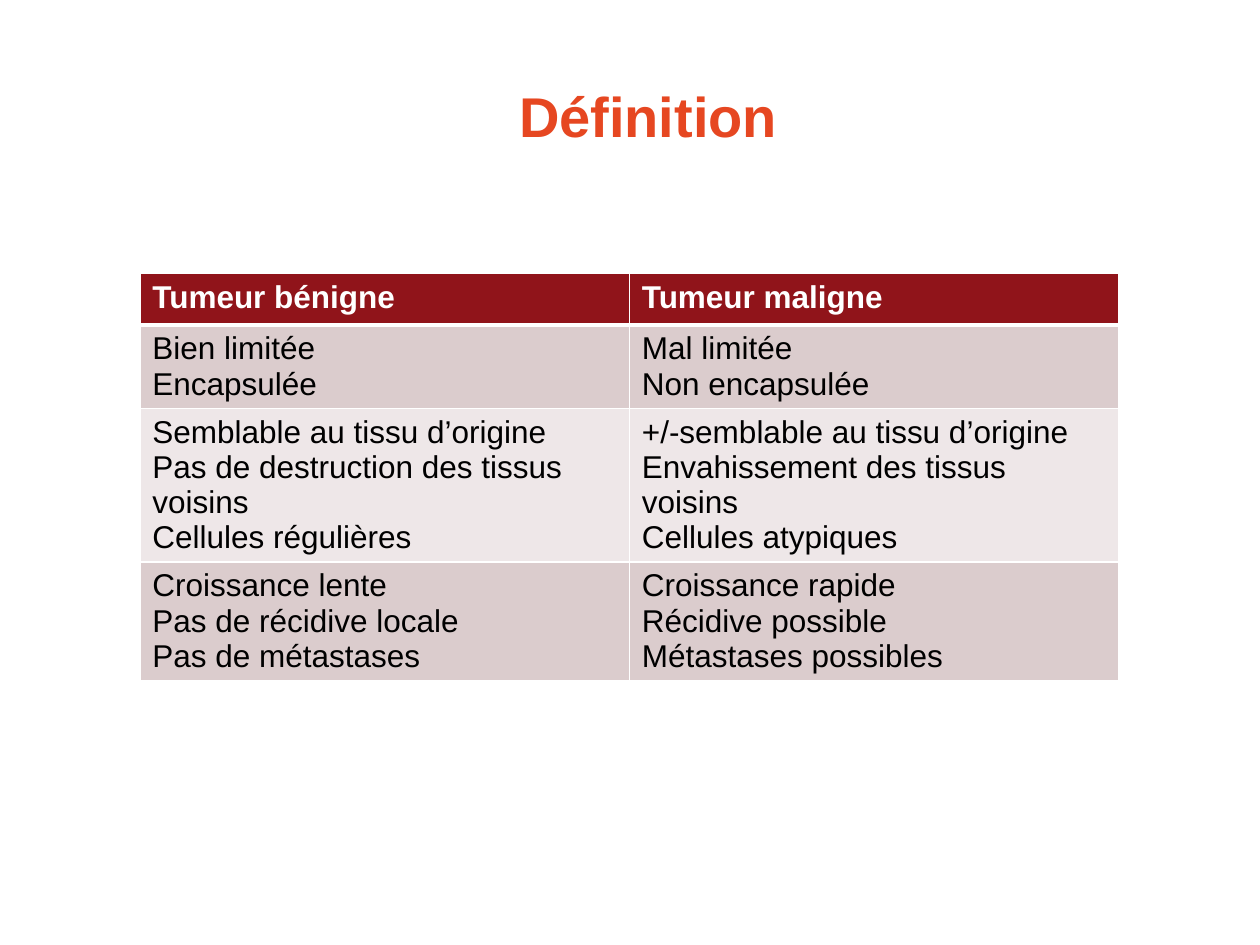
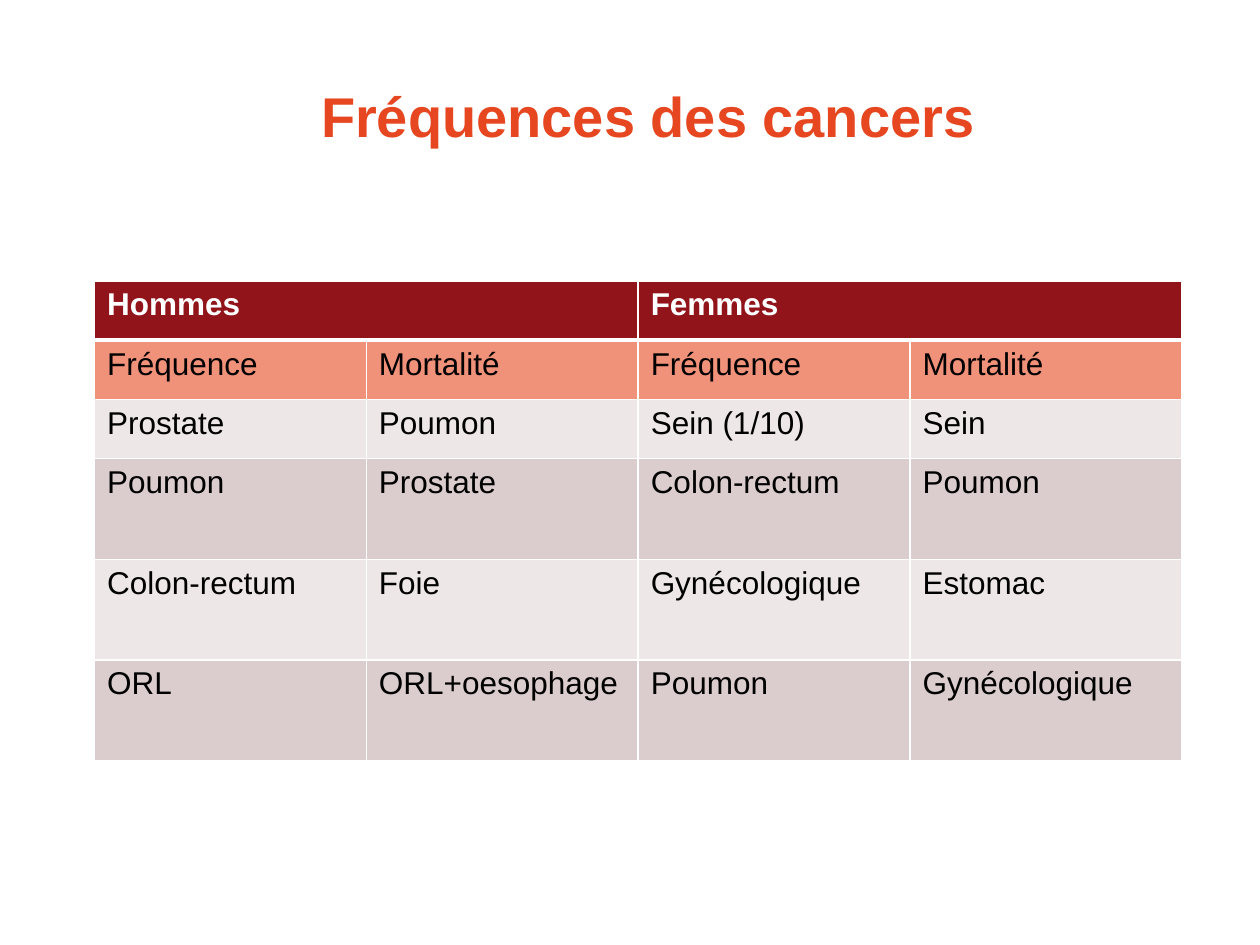
from lxml.etree import SubElement
from pptx import Presentation
from pptx.dml.color import RGBColor
from pptx.enum.text import MSO_ANCHOR, PP_ALIGN
from pptx.oxml.ns import qn
from pptx.util import Inches, Pt

FONT = "Arial"
ORANGE = "E64721"
DARK_RED = "90141A"
SALMON = "F0917A"
ROSE = "DBCCCD"
PALE_ROSE = "EEE7E8"
WHITE = "FFFFFF"
BLACK = "000000"

TUMOURS = [
    ["Tumeur bénigne", "Tumeur maligne"],
    ["Bien limitée\nEncapsulée", "Mal limitée\nNon encapsulée"],
    [
        "Semblable au tissu d’origine\nPas de destruction des tissus voisins\nCellules régulières",
        "+/-semblable au tissu d’origine\nEnvahissement des tissus voisins\nCellules atypiques",
    ],
    [
        "Croissance lente\nPas de récidive locale\nPas de métastases",
        "Croissance rapide\nRécidive possible\nMétastases possibles",
    ],
]

CANCERS = [
    ["Hommes", None, "Femmes", None],
    ["Fréquence", "Mortalité", "Fréquence", "Mortalité"],
    ["Prostate", "Poumon", "Sein (1/10)", "Sein"],
    ["Poumon", "Prostate", "Colon-rectum", "Poumon"],
    ["Colon-rectum", "Foie", "Gynécologique", "Estomac"],
    ["ORL", "ORL+oesophage", "Poumon", "Gynécologique"],
]


def color(value):
    return RGBColor.from_string(value)


def write(frame, text, size=18, ink=BLACK, bold=False, align=PP_ALIGN.LEFT):
    frame.text = text
    for paragraph in frame.paragraphs:
        paragraph.alignment = align
        for run in paragraph.runs:
            run.font.name = FONT
            run.font.size = Pt(size)
            run.font.bold = bold
            run.font.color.rgb = color(ink)


def add_titled_slide(deck, heading):
    slide = deck.slides.add_slide(deck.slide_layouts[5])
    title = slide.shapes.title
    title.left, title.top = Inches(1), Inches(0.44)
    title.width, title.height = Inches(8.29), Inches(0.95)
    write(title.text_frame, heading, size=32, ink=ORANGE, bold=True, align=PP_ALIGN.CENTER)
    title.text_frame.vertical_anchor = MSO_ANCHOR.MIDDLE
    return slide


def set_borders(cell, top=1, bottom=1):
    properties = cell._tc.get_or_add_tcPr()
    for side, width in (("L", 1), ("R", 1), ("T", top), ("B", bottom)):
        border = SubElement(properties, qn(f"a:ln{side}"), w=str(Pt(width)))
        fill = SubElement(border, qn("a:solidFill"))
        SubElement(fill, qn("a:srgbClr"), val=WHITE)


def add_comparison(slide, content, left, top, width, heights, fills):
    columns = len(content[0])
    table = slide.shapes.add_table(
        len(content), columns, Inches(left), Inches(top), Inches(width), Inches(sum(heights))
    ).table
    for column in table.columns:
        column.width = Inches(width / columns)
    for r, (entries, height, fill) in enumerate(zip(content, heights, fills)):
        table.rows[r].height = Inches(height)
        header = r == 0
        for c, entry in enumerate(entries):
            cell = table.cell(r, c)
            set_borders(cell, top=3 if r == 1 else 1, bottom=3 if header else 1)
            cell.fill.solid()
            cell.fill.fore_color.rgb = color(fill)
            if entry is None:
                table.cell(r, c - 1).merge(cell)
            else:
                write(cell.text_frame, entry, ink=WHITE if header else BLACK, bold=header)


def main():
    deck = Presentation()
    deck.slide_width, deck.slide_height = Inches(10), Inches(7.5)

    definition = add_titled_slide(deck, "Définition")
    add_comparison(
        definition, TUMOURS, 1.11, 2.17, 7.77,
        heights=[0.41, 0.65, 1.22, 0.94],
        fills=[DARK_RED, ROSE, PALE_ROSE, ROSE],
    )

    frequencies = add_titled_slide(deck, "Fréquences des cancers")
    add_comparison(
        frequencies, CANCERS, 0.75, 2.23, 8.63,
        heights=[0.47] * 3 + [0.8] * 3,
        fills=[DARK_RED, SALMON] + [PALE_ROSE, ROSE] * 2,
    )

    deck.save("out.pptx")


if __name__ == "__main__":
    main()
